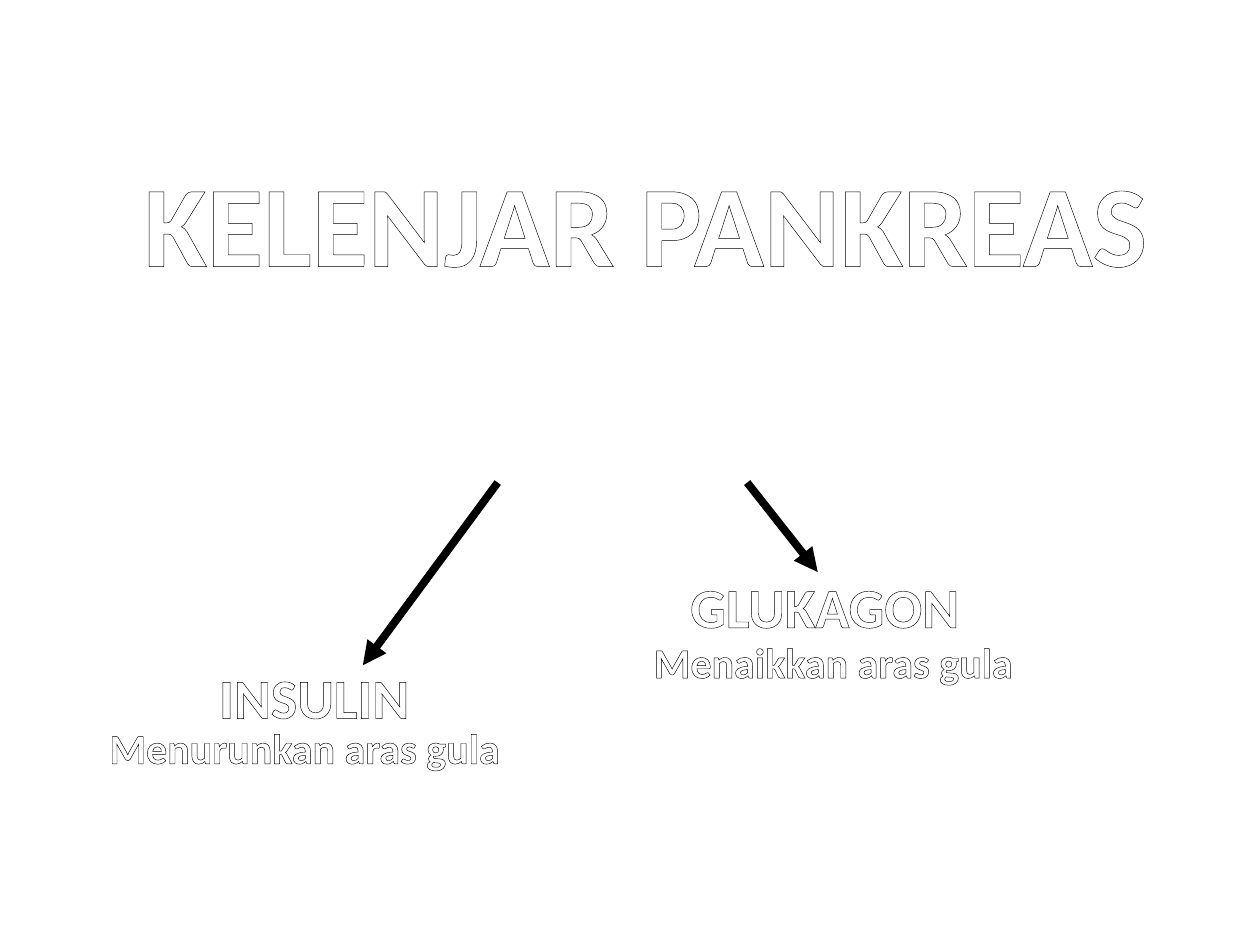
from lxml.etree import SubElement
from pptx import Presentation
from pptx.dml.color import RGBColor
from pptx.enum.shapes import MSO_CONNECTOR
from pptx.enum.text import MSO_ANCHOR, MSO_AUTO_SIZE, PP_ALIGN
from pptx.oxml import parse_xml
from pptx.oxml.ns import nsdecls, qn
from pptx.util import Inches, Pt

WHITE = RGBColor(0xFF, 0xFF, 0xFF)
BLACK = RGBColor(0x00, 0x00, 0x00)
COLUMNS, ROWS = 100, 75
TITLE_ONLY = 5


class HormoneSlide:
    font_format = {"name": "Calibri", "bold": True}
    frame_format = {
        "auto_size": MSO_AUTO_SIZE.SHAPE_TO_FIT_TEXT,
        "vertical_anchor": MSO_ANCHOR.TOP,
    }
    outline_width = Pt(0.75)
    arrow_width = Pt(4.5)

    def __init__(self, presentation):
        self.column = presentation.slide_width / COLUMNS
        self.row = presentation.slide_height / ROWS
        self.slide = presentation.slides.add_slide(presentation.slide_layouts[TITLE_ONLY])

    def place(self, column, row):
        return round(column * self.column), round(row * self.row)

    def outlined_text(self, shape, text, size, wrap):
        frame = shape.text_frame
        for name, value in {**self.frame_format, "word_wrap": wrap}.items():
            setattr(frame, name, value)
        paragraph = frame.paragraphs[0]
        paragraph.alignment = PP_ALIGN.LEFT
        run = paragraph.add_run()
        run.text = text
        for name, value in {**self.font_format, "size": Pt(size)}.items():
            setattr(run.font, name, value)
        run.font.color.rgb = WHITE
        outline = parse_xml(
            f'<a:ln {nsdecls("a")} w="{self.outline_width}">'
            f'<a:solidFill><a:srgbClr val="{BLACK}"/></a:solidFill></a:ln>'
        )
        run.font._element.insert(0, outline)

    def title(self, text, column, row, width, height, size):
        shape = self.slide.shapes.title
        left, top = self.place(column, row)
        box_width, box_height = self.place(width, height)
        bounds = {"left": left, "top": top, "width": box_width, "height": box_height}
        for name, value in bounds.items():
            setattr(shape, name, value)
        self.outlined_text(shape, text, size, wrap=False)

    def label(self, text, column, row, width, height, size):
        shape = self.slide.shapes.add_textbox(
            *self.place(column, row), *self.place(width, height)
        )
        self.outlined_text(shape, text, size, wrap=True)

    def arrow(self, start, end):
        connector = self.slide.shapes.add_connector(
            MSO_CONNECTOR.STRAIGHT, *self.place(*start), *self.place(*end)
        )
        connector.line.color.rgb = BLACK
        connector.line.width = self.arrow_width
        properties = connector._element.spPr
        SubElement(properties.find(qn("a:ln")), qn("a:tailEnd"), type="triangle")
        SubElement(properties, qn("a:effectLst"))


def main():
    presentation = Presentation()
    presentation.slide_width = Inches(10)
    presentation.slide_height = Inches(7.5)

    hormones = HormoneSlide(presentation)
    hormones.title("KELENJAR PANKREAS", 10.4, 11.5, 82.6, 12.1, 66)
    hormones.label("INSULIN", 16.4, 52.1, 22.1, 6.4, 32)
    hormones.arrow((39.5, 38.3), (28.8, 52.8))
    hormones.label("GLUKAGON", 53.8, 44.9, 25, 6.4, 32)
    hormones.arrow((59.3, 38.3), (64.9, 45.4))
    hormones.label("Menurunkan aras gula", 7.7, 56.8, 39.4, 5, 24)
    hormones.label("Menaikkan aras gula", 50.9, 50, 39.4, 5, 24)

    presentation.save("out.pptx")


if __name__ == "__main__":
    main()
